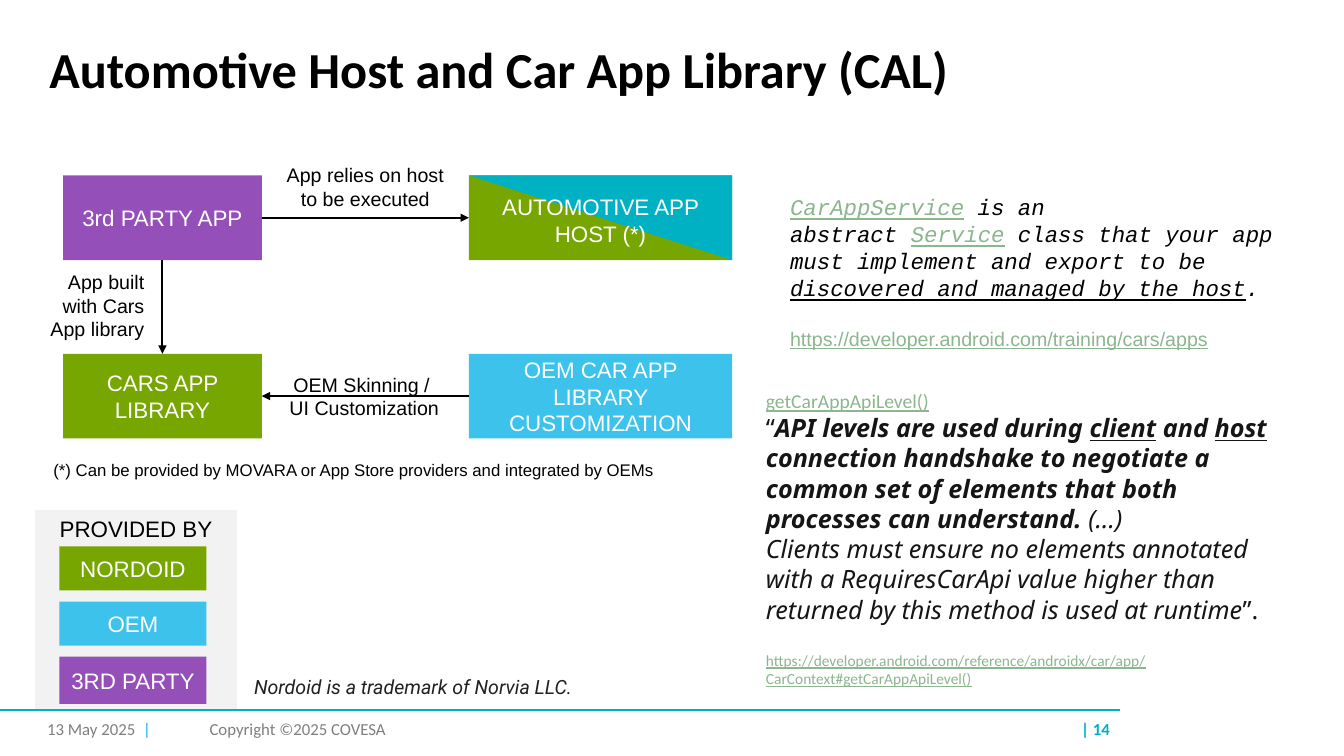
from dataclasses import dataclass

import pptx
import pptx.dml.color
import pptx.enum.shapes
import pptx.enum.text
import pptx.oxml
import pptx.oxml.ns
import pptx.util
from pptx.util import Pt

RGBColor = pptx.dml.color.RGBColor
MSO_SHAPE = pptx.enum.shapes.MSO_SHAPE
ALIGN = pptx.enum.text.PP_ALIGN
ANCHOR = pptx.enum.text.MSO_ANCHOR

BLACK = RGBColor(0x00, 0x00, 0x00)
WHITE = RGBColor(0xFF, 0xFF, 0xFF)
PANEL_GRAY = RGBColor(0xF2, 0xF2, 0xF2)
FOOTER_GRAY = RGBColor(0x7F, 0x7F, 0x7F)
QUOTE_INK = RGBColor(0x15, 0x15, 0x15)
NOTE_INK = RGBColor(0x20, 0x21, 0x24)
LINK = RGBColor(0x8B, 0xB6, 0x8E)
PURPLE = RGBColor(0x94, 0x50, 0xB8)
GREEN = RGBColor(0x78, 0xA6, 0x00)
SKY = RGBColor(0x3C, 0xC2, 0xEB)
TEAL = RGBColor(0x00, 0xB1, 0xC3)
BAR_BLUE = RGBColor(0x00, 0xB0, 0xF0)
NBSP = chr(160)


@dataclass
class Run:
    """A piece of text; None keeps the paragraph's setting."""
    text: str
    color: RGBColor | None = None
    bold: bool | None = None
    italic: bool | None = None
    underline: bool | None = None


@dataclass
class Para:
    runs: list[Run]
    size: float
    font: str = "Arial"
    color: RGBColor = BLACK
    align: ALIGN = ALIGN.LEFT
    bold: bool | None = None
    italic: bool | None = None
    underline: bool | None = None


@dataclass
class Box:
    left: float
    top: float
    width: float
    height: float
    paras: list[Para]
    fill: RGBColor | None = None
    anchor: ANCHOR = ANCHOR.TOP
    shape: MSO_SHAPE = MSO_SHAPE.RECTANGLE


def para(text: str, size: float, **style) -> Para:
    return Para([Run(text)], size, **style)


def tile(left: float, top: float, width: float, height: float,
         text: str, fill: RGBColor) -> Box:
    """A filled box with its label in the middle."""
    label = para(text, 16, color=WHITE, align=ALIGN.CENTER)
    return Box(left, top, width, height, [label], fill, ANCHOR.MIDDLE)


def style_font(font, item: Para | Run) -> None:
    if item.color is not None:
        font.color.rgb = item.color
    for key in ("bold", "italic", "underline"):
        if getattr(item, key) is not None:
            setattr(font, key, getattr(item, key))


def write(tf, paras: list[Para]) -> None:
    for i, item in enumerate(paras):
        p = tf.add_paragraph() if i else tf.paragraphs[0]
        p.alignment = item.align
        p.font.name, p.font.size = item.font, Pt(item.size)
        style_font(p.font, item)
        for run in item.runs:
            r = p.add_run()
            r.text = run.text
            style_font(r.font, run)


def add_box(s, box: Box):
    frame = [Pt(v) for v in (box.left, box.top, box.width, box.height)]
    if box.fill is None:
        sp = s.shapes.add_textbox(*frame)
    else:
        sp = s.shapes.add_shape(box.shape, *frame)
        sp.shadow.inherit = False
        sp.fill.solid()
        sp.fill.fore_color.rgb = box.fill
        sp.line.fill.background()
    tf = sp.text_frame
    tf.word_wrap = True
    tf.vertical_anchor = box.anchor
    write(tf, box.paras)
    return sp


def add_line(s, color: RGBColor, x1: float = 0, y1: float = 0, x2: float = 0, y2: float = 0):
    line = s.shapes.add_connector(pptx.enum.shapes.MSO_CONNECTOR.STRAIGHT,
                                  Pt(x1), Pt(y1), Pt(x2), Pt(y2))
    line.line.color.rgb = color
    line.line.width = Pt(1.5)
    line._element.spPr.append(pptx.oxml.parse_xml(
        f'<a:effectLst {pptx.oxml.ns.nsdecls("a")}/>'))
    return line


def add_arrow(s, start, start_side: int, end, end_side: int) -> None:
    arrow = add_line(s, BLACK)
    arrow.begin_connect(start, start_side)
    arrow.end_connect(end, end_side)
    arrow.line._get_or_add_ln().append(pptx.oxml.parse_xml(
        f'<a:tailEnd {pptx.oxml.ns.nsdecls("a")} type="triangle"/>'))


COL_1, COL_2, ROW_1, ROW_2 = 45, 335, 125.3, 252.7
APP_W, HOST_W, BOX_H = 142, 188, 60.5

LEGEND = [("NORDOID", GREEN, 31.5), ("OEM", SKY, 31.5), ("3RD PARTY", PURPLE, 33.8)]
LEGEND_TOP, LEGEND_STEP = 390.3, 39.4

CENTER = {"align": ALIGN.CENTER}
TEXTS = [
    Box(25.2, 189.4, 85, 58.3,
        [para("App built with Cars App library", 14, align=ALIGN.RIGHT)]),
    Box(199.4, 262.8, 121.7, 41,
        [para("OEM Skinning / ", 14, **CENTER), para("UI Customization", 14, **CENTER)]),
    Box(197.3, 113, 127.4, 41,
        [para("App relies on host", 14, **CENTER), para("to be executed", 14, **CENTER)]),
    Box(557.3, 134.6, 376.6, 85, [Para([
        Run("CarAppService", LINK, underline=True),
        Run(f"{NBSP}is an abstract{NBSP}"),
        Run("Service", LINK, underline=True),
        Run(f"{NBSP}class that your app must implement and export to be "),
        Run("discovered and managed by the host", underline=True),
        Run("."),
    ], 16, "Courier New", italic=True)]),
    Box(557.3, 229.7, 355.7, 24.5,
        [para("https://developer.android.com/training/cars/apps", 14,
              color=LINK, underline=True)]),
    Box(167, 478.8, 249.1, 24.5,
        [para("Nordoid is a trademark of Norvia LLC.", 14, font="Roboto",
              color=NOTE_INK, align=ALIGN.RIGHT, italic=True)]),
    Box(31, 324.7, 491.8, 21.6,
        [para("(*) Can be provided by MOVARA or App Store providers and integrated by OEMs",
              12)]),
    Box(540, 461.5, 395.3, 33.8,
        [para("https://developer.android.com/reference/androidx/car/app/"
              "CarContext#getCarAppApiLevel()", 11, font="Calibri",
              color=LINK, underline=True)]),
    Box(540, 274.3, 393.8, 180, [
        para("getCarAppApiLevel()", 14, font="Calibri", color=LINK, underline=True),
        Para([
            Run("“"),
            Run("API levels are used during ", bold=True, italic=True),
            Run("client", bold=True, italic=True, underline=True),
            Run(" and ", bold=True, italic=True),
            Run("host", bold=True, italic=True, underline=True),
            Run(" connection handshake to negotiate a common set of elements "
                "that both processes can understand.", bold=True, italic=True),
            Run(" (…)", italic=True),
        ], 18, "Noto Sans", QUOTE_INK),
        Para([
            Run("Clients must ensure no elements annotated with a RequiresCarApi value "
                "higher than returned by this method is used at runtime", italic=True),
            Run("”."),
        ], 18, "Noto Sans", QUOTE_INK),
    ]),
]
FOOTER_TOP, FOOTER_H = 506.2, 28.8
FOOTER = [
    (26.6, 126.7, Para([Run("13 May 2025  ", FOOTER_GRAY), Run("|", BAR_BLUE)], 12, "Calibri")),
    (142.6, 153.4, para("Copyright ©2025 COVESA", 12, font="Calibri", color=FOOTER_GRAY)),
    (583.9, 216, para("| 14", 12, font="Calibri", color=TEAL, align=ALIGN.RIGHT, bold=True)),
]


def add_title(s) -> None:
    sp = s.shapes.title
    sp.left, sp.top, sp.width, sp.height = Pt(28), Pt(28.8), Pt(828), Pt(49)
    tf = sp.text_frame
    tf.word_wrap = True
    tf.vertical_anchor = ANCHOR.TOP
    tf.auto_size = pptx.enum.text.MSO_AUTO_SIZE.NONE
    write(tf, [para("Automotive Host and Car App Library (CAL)", 36, font="Calibri", bold=True)])
    tf.paragraphs[0].line_spacing = 0.9


def add_diagram(s) -> None:
    app = add_box(s, tile(COL_1, ROW_1, APP_W, BOX_H, "3rd PARTY APP", PURPLE))
    library = add_box(s, tile(COL_1, ROW_2, APP_W, BOX_H, "CARS APP LIBRARY", GREEN))
    oem = add_box(s, tile(COL_2, ROW_2, HOST_W, BOX_H, "OEM CAR APP LIBRARY CUSTOMIZATION", SKY))
    host = add_box(s, Box(COL_2, ROW_1, HOST_W, BOX_H, [], GREEN))
    half = add_box(s, Box(COL_2, ROW_1, HOST_W, BOX_H, [], TEAL, shape=MSO_SHAPE.RIGHT_TRIANGLE))
    half.rotation = 180
    add_box(s, Box(COL_2, 134.6, HOST_W, 46,
                   [para("AUTOMOTIVE APP HOST (*)", 16, color=WHITE, **CENTER)]))
    add_arrow(s, oem, 1, library, 3)
    add_arrow(s, app, 3, host, 1)
    add_arrow(s, app, 2, library, 0)


def main() -> None:
    prs = pptx.Presentation()
    prs.slide_width, prs.slide_height = Pt(960), Pt(540)
    s = prs.slides.add_slide(prs.slide_layouts[5])
    add_line(s, TEAL, 0, 507, 800, 507)
    add_title(s)
    add_box(s, Box(25.2, 364.3, 144, 142, [para("PROVIDED BY", 16, **CENTER)], PANEL_GRAY))
    for i, (name, fill, height) in enumerate(LEGEND):
        add_box(s, tile(42.5, LEGEND_TOP + i * LEGEND_STEP, 105, height, name, fill))
    add_diagram(s)
    for box in TEXTS:
        add_box(s, box)
    for left, width, item in FOOTER:
        add_box(s, Box(left, FOOTER_TOP, width, FOOTER_H, [item], anchor=ANCHOR.MIDDLE))
    prs.save("out.pptx")


if __name__ == "__main__":
    main()
